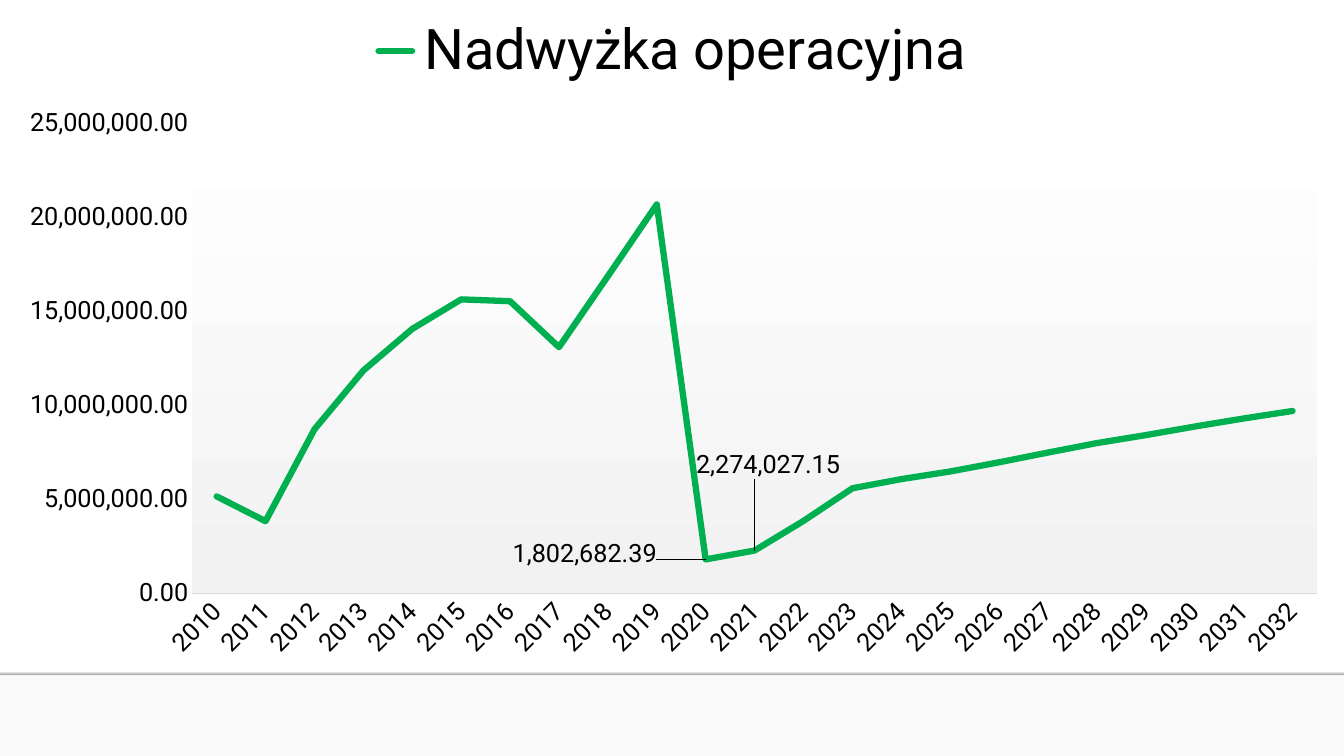
from lxml import etree
from pptx import Presentation
from pptx import util as u
from pptx.chart.data import CategoryChartData
from pptx.dml.color import RGBColor
from pptx.enum import chart as ch, shapes
from pptx.oxml import parse_xml
from pptx.oxml.ns import nsdecls, qn

COLORS = {
    "text": "000000", "surplus": "00B050", "axis": "D9D9D9", "white": "FFFFFF",
    "plot_end": "F2F2F2", "page_end": "FAFAFA", "band_start": "DCDCE0",
    "band_end": "DEDEE2", "rule": "000001",
}
YEARS = [str(year) for year in range(2010, 2033)]
SURPLUS = [
    5151970, 3833988.15, 8716254.23, 11838187.22, 14054155.9, 15622511.65,
    15525919.33, 13082054.6, 16857930.82, 20668019.19, 1802682.39, 2274027.15,
    3845457, 5580449, 6068250, 6476618, 6962772, 7481825, 7982969, 8408355,
    8863969, 9291871, 9689763,
]
# Labelled years, with the label's shift as shares of the chart's size
LABEL_SHIFTS = {"2020": (-0.09, 0.02), "2021": (0.01, -0.1)}


class SurplusSlide:
    """Style and current slide; positions are shares of the slide's size."""

    font_name = "Roboto"
    body_size = 18
    legend_size = 40

    def __init__(self, deck):
        self.deck = deck
        self.page = deck.slides.add_slide(deck.slide_layouts[6])

    def area(self, left, top, width, height):
        wide, high = self.deck.slide_width, self.deck.slide_height
        return int(left * wide), int(top * high), int(width * wide), int(height * high)

    def color(self, name):
        return RGBColor.from_string(COLORS[name])

    def style_font(self, font, size):
        font.name, font.size = self.font_name, u.Pt(size)
        font.bold = False
        font.color.rgb = self.color("text")

    def gradient(self, start, end, direction='<a:lin ang="5400000" scaled="0"/>', start_alpha=100):
        return parse_xml(
            f'<a:gradFill {nsdecls("a")} rotWithShape="1"><a:gsLst>'
            f'<a:gs pos="0"><a:srgbClr val="{COLORS[start]}">'
            f'<a:alpha val="{start_alpha * 1000}"/></a:srgbClr></a:gs>'
            f'<a:gs pos="100000"><a:srgbClr val="{COLORS[end]}"/></a:gs>'
            f'</a:gsLst>{direction}</a:gradFill>')

    def background(self, start, end):
        fill = self.page.background.fill
        fill.solid()
        solid = self.page.element.find(".//" + qn("p:bgPr")).find(qn("a:solidFill"))
        circle = ('<a:path path="circle"><a:fillToRect l="43000" t="0" '
                  'r="43000" b="100000"/></a:path>')
        solid.getparent().replace(solid, self.gradient(start, end, circle))

    def band(self, top, height):
        box = self.page.shapes.add_shape(
            shapes.MSO_SHAPE.RECTANGLE, *self.area(0, top, 1, height))
        box.shadow.inherit = False
        box.line.fill.background()
        box.fill.solid()
        solid = box._element.spPr.find(qn("a:solidFill"))
        solid.getparent().replace(
            solid, self.gradient("band_start", "band_end", start_alpha=0))

    def rule(self, top):
        left, y, width, _ = self.area(0, top, 1, 0)
        line = self.page.shapes.add_connector(
            shapes.MSO_CONNECTOR.STRAIGHT, left, y, left + width, y)
        line.line.width = u.Pt(1)
        line.line.color.rgb = self.color("rule")
        properties = line._element.spPr
        shade = properties.find(".//" + qn("a:srgbClr"))
        etree.SubElement(shade, qn("a:alpha")).set("val", "20000")
        etree.SubElement(properties, qn("a:effectLst"))

    def manual_layout(self, x, y, width=None, height=None):
        parts = [("x", x), ("y", y)]
        if width is not None:
            parts = [("layoutTarget", "inner"), ("xMode", "edge"), ("yMode", "edge"),
                     *parts, ("w", width), ("h", height)]
        inner = "".join(f'<c:{tag} val="{value}"/>' for tag, value in parts)
        return parse_xml(f'<c:layout {nsdecls("c")}><c:manualLayout>{inner}'
                         '</c:manualLayout></c:layout>')

    def line_chart(self, name, years, values, height):
        data = CategoryChartData(number_format="#,##0.00")
        data.categories = years
        data.add_series(name, values)
        chart = self.page.shapes.add_chart(
            ch.XL_CHART_TYPE.LINE, *self.area(0, 0, 1, height), data).chart
        self.style_font(chart.font, self.body_size)
        chart.has_title = False
        chart.has_legend = True
        chart.legend.position = ch.XL_LEGEND_POSITION.TOP
        chart.legend.include_in_layout = False
        self.style_font(chart.legend.font, self.legend_size)
        self.style_axes(chart)
        self.style_plot(chart)
        self.style_series(chart.plots[0], years)

    def style_axes(self, chart):
        for axis in (chart.category_axis, chart.value_axis):
            axis.has_major_gridlines = False
            axis.major_tick_mark = axis.minor_tick_mark = ch.XL_TICK_MARK.NONE
            self.style_font(axis.tick_labels.font, self.body_size)
        chart.category_axis.format.line.color.rgb = self.color("axis")
        chart.category_axis.format.line.width = u.Pt(0.75)
        chart.category_axis._element.txPr.bodyPr.set("rot", "-2700000")
        scale = chart.value_axis
        scale.format.line.fill.background()
        scale.minimum_scale, scale.maximum_scale, scale.major_unit = 0, 25000000, 5000000
        scale.tick_labels.number_format = "#,##0.00"
        scale.tick_labels.number_format_is_linked = False

    def style_plot(self, chart):
        # Plot area: fixed inner frame and vertical gradient
        plot_area = chart._chartSpace.chart.plotArea
        for layout in plot_area.findall(qn("c:layout")):
            plot_area.remove(layout)
        plot_area.insert(0, self.manual_layout(0.143, 0.183, 0.837, 0.7))
        etree.SubElement(plot_area, qn("c:spPr")).append(self.gradient("white", "plot_end"))
        # Chart area: white, without a border
        chart._chartSpace.chart.addnext(parse_xml(
            f'<c:spPr {nsdecls("c", "a")}><a:solidFill><a:srgbClr val="{COLORS["white"]}"/>'
            '</a:solidFill><a:ln><a:noFill/></a:ln></c:spPr>'))

    def style_series(self, plot, years):
        plot.vary_by_categories = False
        series = plot.series[0]
        series.smooth = False
        series.marker.style = ch.XL_MARKER_STYLE.NONE
        series.format.line.color.rgb = self.color("surplus")
        series.format.line.width = u.Pt(4.5)
        series.format.line._ln.set("cap", "rnd")
        series.data_labels.show_value = False
        for year, shift in LABEL_SHIFTS.items():
            label = series.points[years.index(year)].data_label
            self.style_font(label.font, self.body_size)
            label.position = ch.XL_LABEL_POSITION.ABOVE
            label._dLbl.find(qn("c:idx")).addnext(self.manual_layout(*shift))


def main():
    deck = Presentation()
    deck.slide_width, deck.slide_height = u.Inches(13.33), u.Inches(7.5)
    slide = SurplusSlide(deck)

    # Backdrop
    slide.background("white", "page_end")
    slide.band(0.068, 0.824)
    slide.rule(0.892)

    # Operating surplus by year
    slide.line_chart("Nadwyżka operacyjna", YEARS, SURPLUS, 0.889)
    deck.save("out.pptx")


if __name__ == "__main__":
    main()
